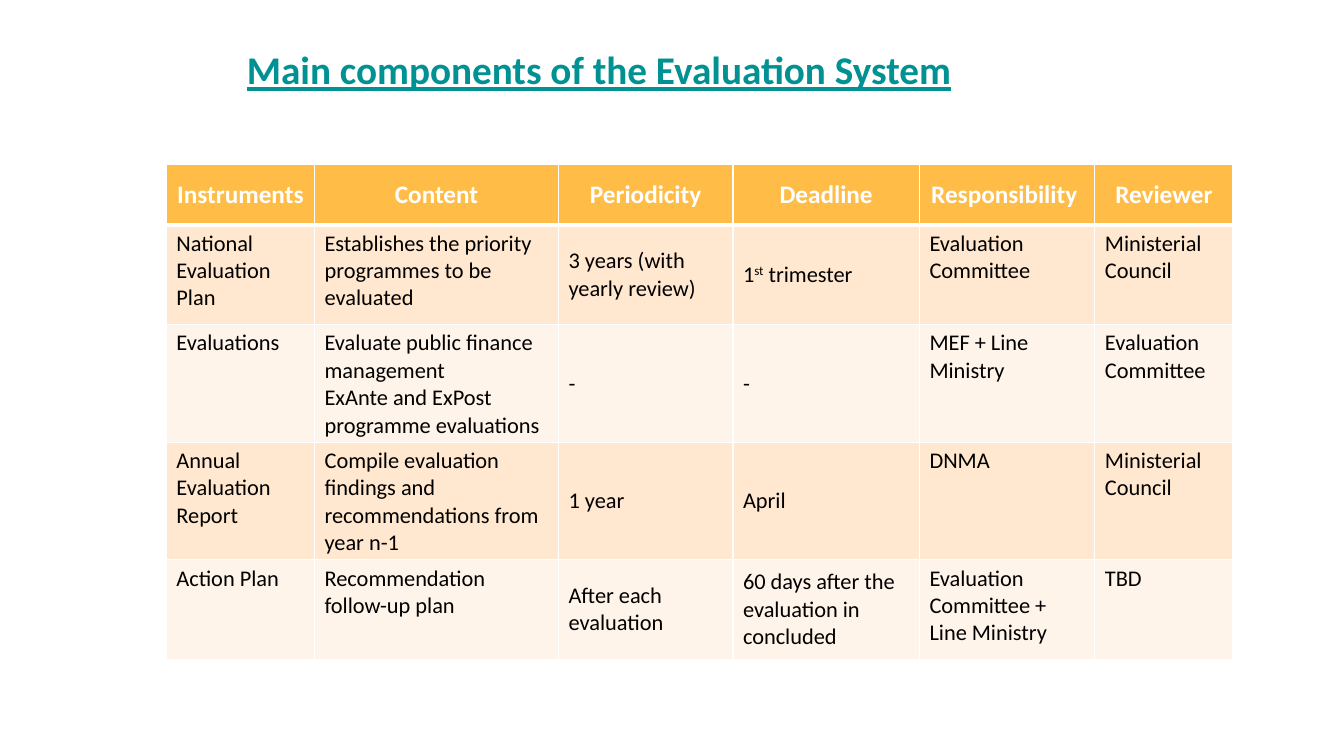
from lxml import etree
from pptx import Presentation
from pptx.dml.color import RGBColor
from pptx.enum import text
from pptx.oxml import ns
from pptx.util import Inches, Pt

TEAL = RGBColor(0x00, 0x91, 0x93)
AMBER = RGBColor(0xFF, 0xBD, 0x47)
PEACH = RGBColor(0xFF, 0xE8, 0xCF)
CREAM = RGBColor(0xFF, 0xF4, 0xE9)
WHITE = RGBColor(0xFF, 0xFF, 0xFF)
BLACK = RGBColor(0x00, 0x00, 0x00)

COLUMN_WIDTHS = [1.47, 2.42, 1.73, 1.85, 1.74, 1.37]
HEADER_HEIGHT, BODY_HEIGHT = 0.6, 0.99
MIDDLE_COLUMNS = (2, 3)
INSTRUMENTS = [
    ["Instruments", "Content", "Periodicity", "Deadline", "Responsibility ", "Reviewer"],
    ["National Evaluation Plan", "Establishes the priority programmes to be evaluated",
     "3 years (with yearly review)", "1^st^ trimester", "Evaluation Committee",
     "Ministerial Council"],
    ["Evaluations",
     "Evaluate public finance management\nExAnte and ExPost programme evaluations",
     "-", "-", "MEF + Line Ministry", "Evaluation Committee"],
    ["Annual Evaluation Report",
     "Compile evaluation findings and recommendations from year n-1",
     "1 year", "April", "DNMA", "Ministerial Council"],
    ["Action Plan", "Recommendation follow-up plan", "After each evaluation",
     "60 days after the evaluation in concluded", "Evaluation Committee + Line Ministry",
     "TBD"],
]


def add_run(paragraph, words, size, color, bold=False):
    """Append a styled run and return it."""
    run = paragraph.add_run()
    run.text = words
    run.font.name = "Calibri"
    run.font.size = Pt(size)
    run.font.bold = bold
    run.font.color.rgb = color
    return run


def add_title(slide, words):
    """Add the underlined slide heading."""
    heading = slide.shapes.add_textbox(Inches(2.35), Inches(0.24), Inches(10.44), Inches(0.89))
    frame = heading.text_frame
    frame.word_wrap = True
    frame.vertical_anchor = text.MSO_ANCHOR.MIDDLE
    add_run(frame.paragraphs[0], words, 28, TEAL, bold=True).font.underline = True


def set_borders(cell, top, bottom):
    """Draw white cell borders with the given top and bottom widths in points."""
    properties = cell._tc.get_or_add_tcPr()
    for side, width in (("L", 1), ("R", 1), ("T", top), ("B", bottom)):
        line = etree.SubElement(properties, ns.qn(f"a:ln{side}"), w=str(Pt(width)))
        fill = etree.SubElement(line, ns.qn("a:solidFill"))
        etree.SubElement(fill, ns.qn("a:srgbClr"), val=str(WHITE))


def fill_cell(cell, words, row, column):
    """Style one cell; newlines split paragraphs and carets enclose superscript."""
    header = row == 0
    set_borders(cell, 3 if row == 1 else 1, 3 if header else 1)
    cell.fill.solid()
    cell.fill.fore_color.rgb = AMBER if header else PEACH if row % 2 else CREAM
    centred = header or column in MIDDLE_COLUMNS
    cell.vertical_anchor = text.MSO_ANCHOR.MIDDLE if centred else text.MSO_ANCHOR.TOP
    frame = cell.text_frame
    for index, sentence in enumerate(words.split("\n")):
        paragraph = frame.add_paragraph() if index else frame.paragraphs[0]
        paragraph.alignment = text.PP_ALIGN.CENTER if header else text.PP_ALIGN.LEFT
        for part, piece in enumerate(sentence.split("^")):
            run = add_run(paragraph, piece, 18 if header else 16,
                          WHITE if header else BLACK, bold=header)
            if part % 2:
                run._r.get_or_add_rPr().set("baseline", "30000")


def add_instruments(slide):
    """Add the table of evaluation instruments."""
    body_rows = len(INSTRUMENTS) - 1
    table = slide.shapes.add_table(
        len(INSTRUMENTS), len(COLUMN_WIDTHS), Inches(1.65), Inches(1.63),
        Inches(sum(COLUMN_WIDTHS)), Inches(HEADER_HEIGHT + body_rows * BODY_HEIGHT)).table
    for column, width in zip(table.columns, COLUMN_WIDTHS):
        column.width = Inches(width)
    for row, entries in enumerate(INSTRUMENTS):
        table.rows[row].height = Inches(BODY_HEIGHT if row else HEADER_HEIGHT)
        for column, words in enumerate(entries):
            fill_cell(table.cell(row, column), words, row, column)


def main():
    """Build and save the slide."""
    deck = Presentation()
    deck.slide_width, deck.slide_height = Inches(13.33), Inches(7.5)
    slide = deck.slides.add_slide(deck.slide_layouts[6])
    add_title(slide, "Main components of the Evaluation System")
    add_instruments(slide)
    deck.save("out.pptx")


if __name__ == "__main__":
    main()
